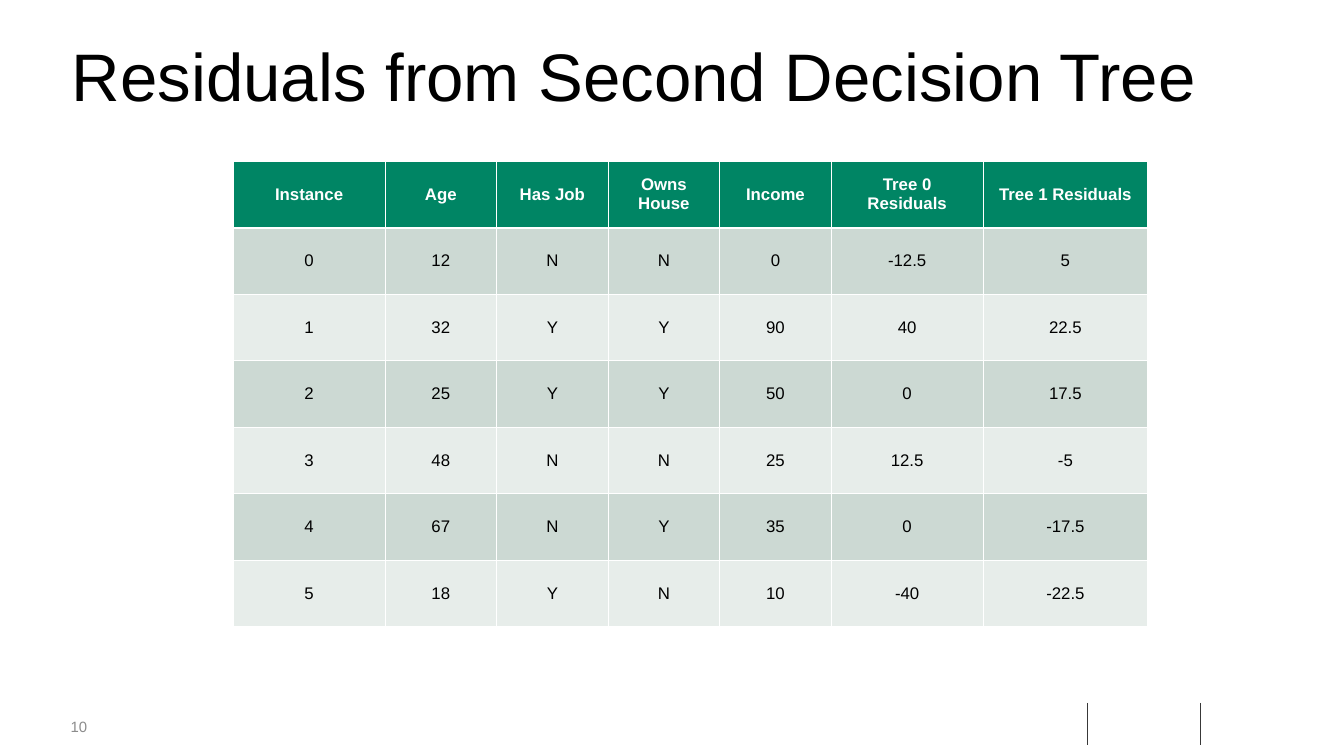
from lxml.etree import SubElement
from pptx import Presentation
from pptx.dml.color import RGBColor
from pptx.enum.shapes import MSO_CONNECTOR
from pptx.enum.text import MSO_ANCHOR, MSO_AUTO_SIZE, PP_ALIGN
from pptx.oxml.ns import qn
from pptx.util import Emu, Pt

PX = 9144  # EMU per px, 100 px to the inch
COLORS = {
    "white": "FFFFFF",
    "black": "000000",
    "header": "008564",
    "odd": "CCD9D3",
    "even": "E7EDEA",
    "rule": "383838",
    "number": "8C8C8C",
}
HEADERS = ["Instance", "Age", "Has Job", "Owns House", "Income",
           "Tree 0\nResiduals", "Tree 1 Residuals"]
ROWS = [
    ["0", "12", "N", "N", "0", "-12.5", "5"],
    ["1", "32", "Y", "Y", "90", "40", "22.5"],
    ["2", "25", "Y", "Y", "50", "0", "17.5"],
    ["3", "48", "N", "N", "25", "12.5", "-5"],
    ["4", "67", "N", "Y", "35", "0", "-17.5"],
    ["5", "18", "Y", "N", "10", "-40", "-22.5"],
]
COLUMN_WIDTHS = [226, 166, 166, 166, 166, 226, 245]
ROW_HEIGHT = 99


def px(*values):
    return [Emu(v * PX) for v in values]


def rgb(name):
    return RGBColor.from_string(COLORS[name])


class SlideBuilder:
    def __init__(self, slide, font="Arial"):
        self.s = slide
        self.font = font

    def style(self, p, size, color, bold=False):
        p.font.name = self.font
        p.font.size = Pt(size)
        p.font.bold = bold
        p.font.color.rgb = rgb(color)

    def line(self, x1, y1, x2, y2, color="rule", width=1):
        c = self.s.shapes.add_connector(MSO_CONNECTOR.STRAIGHT, *px(x1, y1, x2, y2))
        c.line.color.rgb = rgb(color)
        c.line.width = Pt(width)
        SubElement(c._element.spPr, qn("a:effectLst"))

    def text(self, box, text, size, color, spacing=None):
        tf = self.s.shapes.add_textbox(*px(*box)).text_frame
        tf.word_wrap = True
        tf.text = text
        p = tf.paragraphs[0]
        p.line_spacing = spacing
        self.style(p, size, color)
        return tf

    def borders(self, cell, top=1, bottom=1):
        """Draw white borders; call before the cell gets its fill."""
        tcPr = cell._tc.get_or_add_tcPr()
        for side, width in (("L", 1), ("R", 1), ("T", top), ("B", bottom)):
            ln = SubElement(tcPr, qn(f"a:ln{side}"), w=str(Pt(width)))
            fill = SubElement(ln, qn("a:solidFill"))
            SubElement(fill, qn("a:srgbClr"), val=COLORS["white"])

    def table(self, left, top, widths, row_height, rows):
        box = px(left, top, sum(widths), row_height * len(rows))
        table = self.s.shapes.add_table(len(rows), len(widths), *box).table
        for column, width in zip(table.columns, widths):
            column.width = Emu(width * PX)
        for i, values in enumerate(rows):
            table.rows[i].height = Emu(row_height * PX)
            header = i == 0
            fill = "header" if header else "odd" if i % 2 else "even"
            for j, value in enumerate(values):
                cell = table.cell(i, j)
                self.borders(cell, top=3 if i == 1 else 1, bottom=3 if header else 1)
                cell.fill.solid()
                cell.fill.fore_color.rgb = rgb(fill)
                cell.vertical_anchor = MSO_ANCHOR.MIDDLE
                cell.text = value
                for p in cell.text_frame.paragraphs:
                    p.alignment = PP_ALIGN.CENTER
                    self.style(p, 18, "white" if header else "black", header)


def main():
    prs = Presentation()
    prs.slide_width, prs.slide_height = px(2000, 1125)
    b = SlideBuilder(prs.slides.add_slide(prs.slide_layouts[6]))

    for x in (1618, 1786):
        b.line(x, 1046, x, 1109)

    tf = b.text((105, 1068, 59, 27), "10", 16, "number")
    tf.margin_left = tf.margin_top = tf.margin_right = tf.margin_bottom = 0
    tf.vertical_anchor = MSO_ANCHOR.MIDDLE
    tf.auto_size = MSO_AUTO_SIZE.SHAPE_TO_FIT_TEXT

    b.text((97, 60, 1749, 183), "Residuals from Second Decision Tree", 72, "black", 0.9)
    b.table(347, 240, COLUMN_WIDTHS, ROW_HEIGHT, [HEADERS] + ROWS)

    prs.save("out.pptx")


if __name__ == "__main__":
    main()
